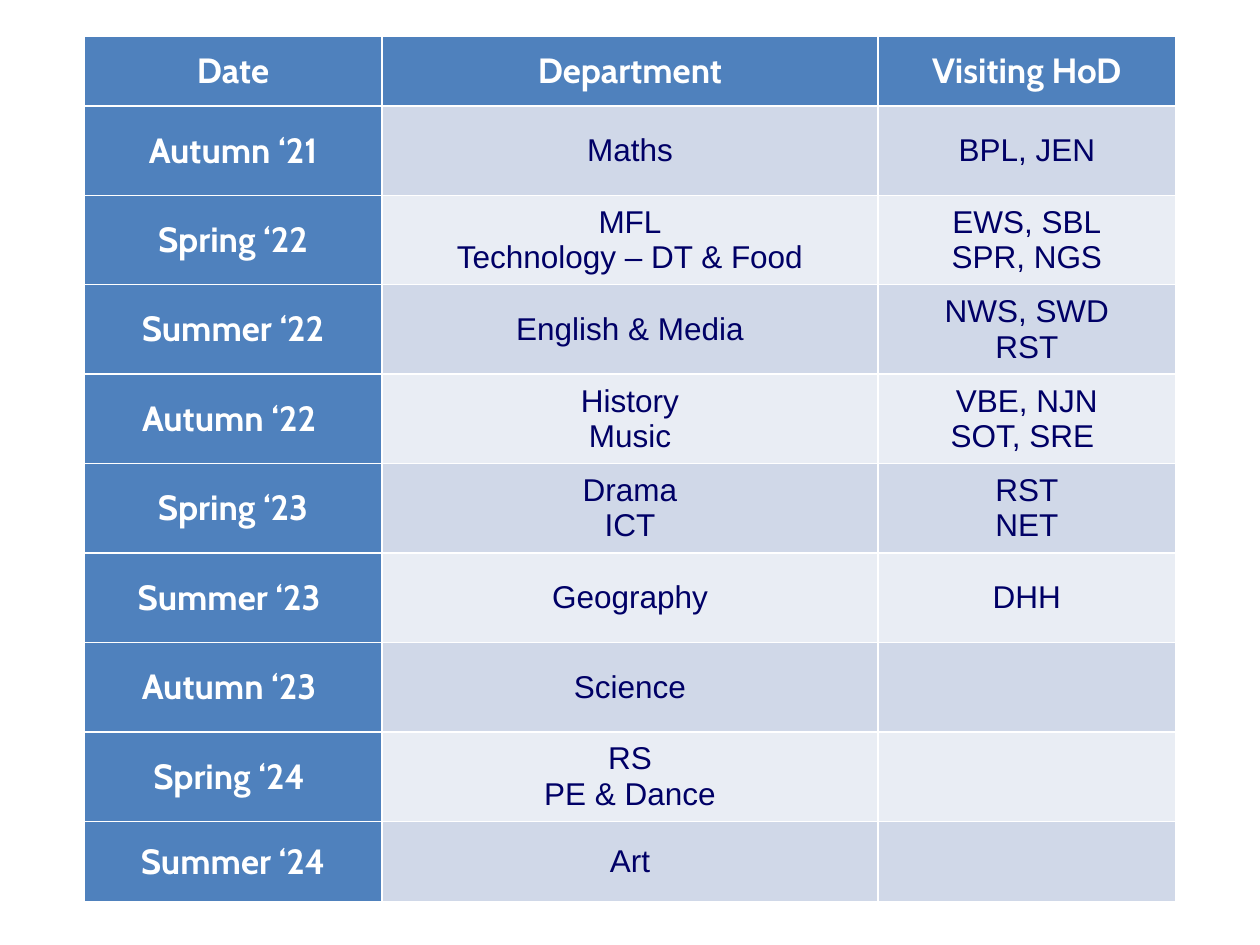
from dataclasses import dataclass

from lxml import etree
from pptx import Presentation
from pptx.dml.color import RGBColor
from pptx.enum.text import MSO_ANCHOR, PP_ALIGN
from pptx.oxml.ns import qn
from pptx.util import Emu, Pt

CENTER, MIDDLE = PP_ALIGN.CENTER, MSO_ANCHOR.MIDDLE

WHITE = RGBColor(0xFF, 0xFF, 0xFF)
NAVY = RGBColor(0x00, 0x00, 0x66)
BLUE = RGBColor(0x4F, 0x81, 0xBD)
BAND_DARK = RGBColor(0xD0, 0xD8, 0xE8)
BAND_LIGHT = RGBColor(0xE9, 0xED, 0xF4)

HEADING_FONT = {"name": "Cabin", "size": Pt(20), "bold": True}
BODY_FONT = {"name": "Arial", "size": Pt(18), "bold": False}
CELL_FORMAT = {"margin_left": 7, "margin_right": 7, "margin_top": 4, "margin_bottom": 4}

EMU_PER_PX = 9144  # 100 px to the inch
LEFT, TOP = 67, 29
COL_WIDTHS = [236, 394, 236]
HEADER_HEIGHT, ROW_HEIGHT, LAST_HEIGHT = 55, 71, 64


@dataclass
class Visit:
    date: str
    department: str
    visitors: str = ""


HEADER = Visit("Date", "Department", "Visiting HoD")
VISITS = [
    Visit("Autumn ‘21", "Maths", "BPL, JEN"),
    Visit("Spring ‘22", "MFL\nTechnology – DT & Food", "EWS, SBL\nSPR, NGS"),
    Visit("Summer ‘22", "English & Media", "NWS, SWD\nRST"),
    Visit("Autumn ‘22 ", "History\nMusic", "VBE, NJN\nSOT, SRE "),
    Visit("Spring ‘23", "Drama\nICT", "RST\nNET"),
    Visit("Summer ‘23 ", "Geography", "DHH"),
    Visit("Autumn ‘23 ", "Science"),
    Visit("Spring ‘24 ", "RS\nPE & Dance"),
    Visit("Summer ‘24", "Art"),
]


def px(n: int) -> Emu:
    return Emu(n * EMU_PER_PX)


def add_borders(cell, color: RGBColor, width: Emu) -> None:
    tc_pr = cell._tc.get_or_add_tcPr()
    for side in ("a:lnL", "a:lnR", "a:lnT", "a:lnB"):
        ln = etree.SubElement(tc_pr, qn(side), w=str(int(width)))
        fill = etree.SubElement(ln, qn("a:solidFill"))
        etree.SubElement(fill, qn("a:srgbClr"), val=str(color))


def fill_cell(cell, text: str, font: dict, color: RGBColor, fill: RGBColor) -> None:
    add_borders(cell, WHITE, Pt(1))
    cell.fill.solid()
    cell.fill.fore_color.rgb = fill
    cell.vertical_anchor = MIDDLE
    for name, value in CELL_FORMAT.items():
        setattr(cell, name, px(value))
    cell.text = text
    for p in cell.text_frame.paragraphs:
        p.alignment = CENTER
        for r in p.runs:
            for name, value in font.items():
                setattr(r.font, name, value)
            r.font.color.rgb = color


def add_schedule(s) -> None:
    visits = [HEADER, *VISITS]
    heights = [HEADER_HEIGHT] + [ROW_HEIGHT] * (len(VISITS) - 1) + [LAST_HEIGHT]
    table = s.shapes.add_table(
        len(visits), len(COL_WIDTHS), px(LEFT), px(TOP),
        px(sum(COL_WIDTHS)), px(sum(heights))).table

    # Grid
    for column, width in zip(table.columns, COL_WIDTHS):
        column.width = px(width)
    for row, height in zip(table.rows, heights):
        row.height = px(height)

    # Blue header row and date column, banded body
    for i, visit in enumerate(visits):
        band = BAND_DARK if i % 2 else BAND_LIGHT
        for j, text in enumerate((visit.date, visit.department, visit.visitors)):
            if i == 0 or j == 0:
                fill_cell(table.cell(i, j), text, HEADING_FONT, WHITE, BLUE)
            else:
                fill_cell(table.cell(i, j), text, BODY_FONT, NAVY, band)


def main() -> None:
    prs = Presentation()
    prs.slide_width, prs.slide_height = px(1000), px(750)
    s = prs.slides.add_slide(prs.slide_layouts[6])
    add_schedule(s)
    prs.save("out.pptx")


if __name__ == "__main__":
    main()
